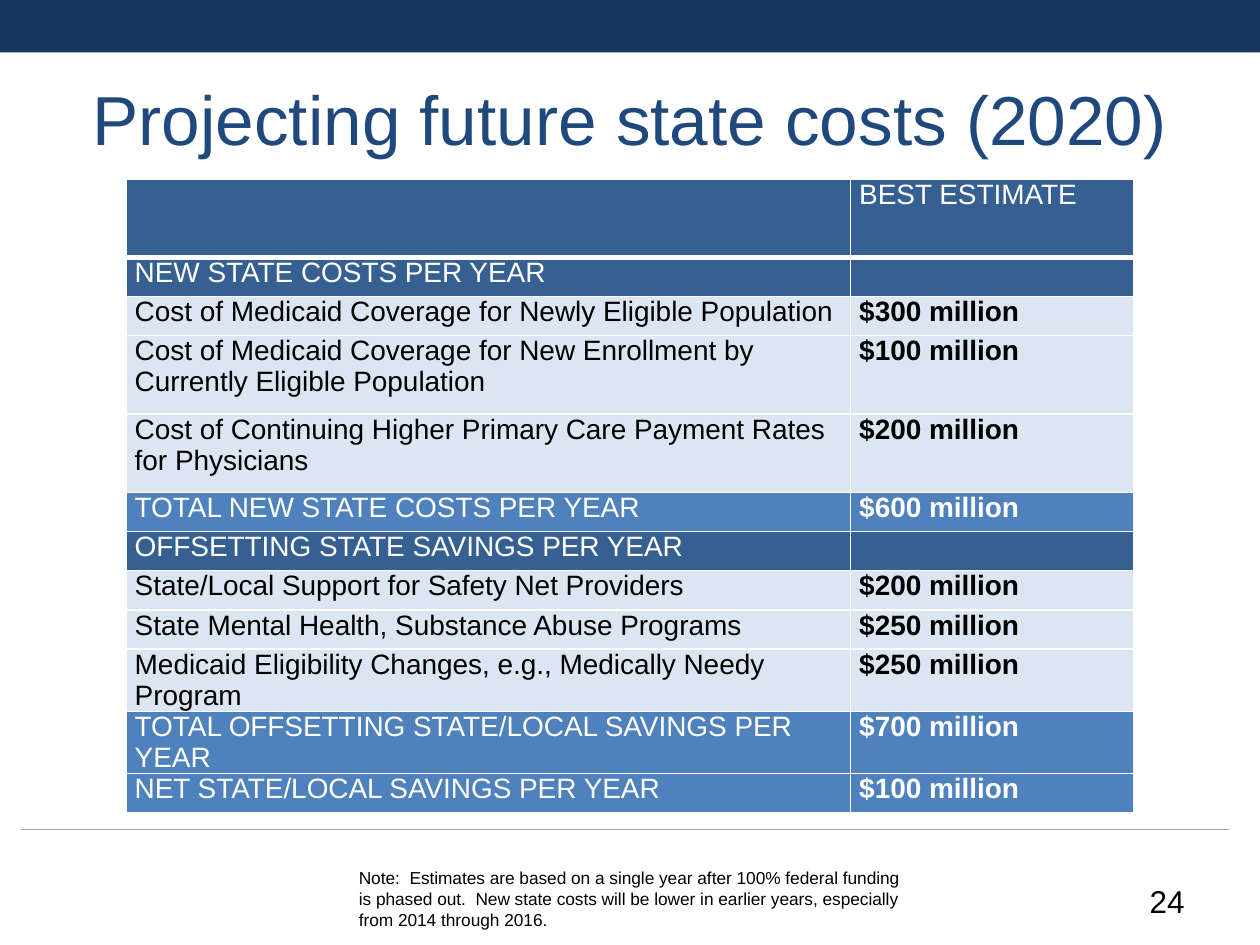
from dataclasses import dataclass
from enum import Enum

import pptx
import pptx.dml.color
import pptx.enum.shapes
import pptx.enum.text
import pptx.oxml
import pptx.oxml.ns
import pptx.util

Pt = pptx.util.Pt
Align = pptx.enum.text.PP_ALIGN
Anchor = pptx.enum.text.MSO_ANCHOR


@dataclass(frozen=True)
class Theme:
    font: str = "Arial"
    white: str = "FFFFFF"
    black: str = "000000"
    title: str = "1F497D"
    banner: str = "17375E"
    rule: str = "A6A6A6"
    section: str = "376092"
    item: str = "DCE6F2"
    total: str = "4F81BD"
    title_size: float = 39.6
    table_size: float = 16
    note_size: float = 9.9
    number_size: float = 18


THEME = Theme()


class RowKind(Enum):
    """Fill and text colour of each kind of table row."""
    SECTION = (THEME.section, THEME.white)
    ITEM = (THEME.item, THEME.black)
    TOTAL = (THEME.total, THEME.white)


@dataclass(frozen=True)
class CostRow:
    kind: RowKind
    label: str
    amount: str = ""
    units: int = 1


@dataclass(frozen=True)
class Box:
    left: float
    top: float
    width: float
    height: float

    def lengths(self) -> tuple:
        return Pt(self.left), Pt(self.top), Pt(self.width), Pt(self.height)


ROW_HEIGHT = 22.4
COLUMN_WIDTHS = (414, 162)
ROWS = (
    CostRow(RowKind.SECTION, "", "BEST ESTIMATE", 2),
    CostRow(RowKind.SECTION, "NEW STATE COSTS PER YEAR"),
    CostRow(RowKind.ITEM, "Cost of Medicaid Coverage for Newly Eligible Population", "$300 million"),
    CostRow(RowKind.ITEM, "Cost of Medicaid Coverage for New Enrollment by Currently Eligible Population",
            "$100 million", 2),
    CostRow(RowKind.ITEM, "Cost of Continuing Higher Primary Care Payment Rates for Physicians",
            "$200 million", 2),
    CostRow(RowKind.TOTAL, "TOTAL NEW STATE COSTS PER YEAR", "$600 million"),
    CostRow(RowKind.SECTION, "OFFSETTING STATE SAVINGS PER YEAR"),
    CostRow(RowKind.ITEM, "State/Local Support for Safety Net Providers", "$200 million"),
    CostRow(RowKind.ITEM, "State Mental Health, Substance Abuse Programs", "$250 million"),
    CostRow(RowKind.ITEM, "Medicaid Eligibility Changes, e.g., Medically Needy Program", "$250 million"),
    CostRow(RowKind.TOTAL, "TOTAL OFFSETTING STATE/LOCAL SAVINGS PER YEAR", "$700 million"),
    CostRow(RowKind.TOTAL, "NET STATE/LOCAL SAVINGS PER YEAR", "$100 million"),
)


def rgb(color: str) -> pptx.dml.color.RGBColor:
    return pptx.dml.color.RGBColor.from_string(color)


def write(frame, text: str, size: float, color: str, align=Align.LEFT, bold: bool = False) -> None:
    frame.word_wrap = True
    paragraph = frame.paragraphs[0]
    paragraph.text = text
    paragraph.alignment = align
    font = paragraph.font
    font.name, font.size, font.bold = THEME.font, Pt(size), bold
    font.color.rgb = rgb(color)


def add_text(slide, box: Box, text: str, size: float, align=Align.LEFT, anchor=Anchor.TOP):
    shape = slide.shapes.add_textbox(*box.lengths())
    write(shape.text_frame, text, size, THEME.black, align)
    shape.text_frame.vertical_anchor = anchor
    return shape


def add_frame(slide) -> None:
    # Banner across the top
    banner = slide.shapes.add_shape(pptx.enum.shapes.MSO_SHAPE.RECTANGLE, *Box(0, 0, 720, 30).lengths())
    banner.shadow.inherit = False
    banner.fill.solid()
    banner.fill.fore_color.rgb = rgb(THEME.banner)
    banner.line.fill.background()

    # Rule above the footer
    rule = slide.shapes.add_connector(pptx.enum.shapes.MSO_CONNECTOR.STRAIGHT,
                                      Pt(12), Pt(474), Pt(702), Pt(474))
    rule.line.color.rgb = rgb(THEME.rule)
    rule.line.width = Pt(0.75)
    properties = rule._element.spPr
    properties.append(properties.makeelement(pptx.oxml.ns.qn("a:effectLst"), {}))


def set_borders(cell, bottom_width: float) -> None:
    properties = cell._tc.get_or_add_tcPr()
    widths = {"lnL": 1, "lnR": 1, "lnT": 1, "lnB": bottom_width}
    for position, (side, width) in enumerate(widths.items()):
        properties.insert(position, pptx.oxml.parse_xml(
            f'<a:{side} {pptx.oxml.ns.nsdecls("a")} w="{Pt(width)}"><a:solidFill>'
            f'<a:srgbClr val="{THEME.white}"/></a:solidFill></a:{side}>'))


def add_cost_table(slide) -> None:
    height = ROW_HEIGHT * sum(row.units for row in ROWS)
    box = Box(72, 102.2, sum(COLUMN_WIDTHS), height)
    table = slide.shapes.add_table(len(ROWS), len(COLUMN_WIDTHS), *box.lengths()).table
    table.first_row = table.horz_banding = False
    for column, width in zip(table.columns, COLUMN_WIDTHS):
        column.width = Pt(width)
    for index, row in enumerate(ROWS):
        table.rows[index].height = Pt(ROW_HEIGHT * row.units)
        fill, color = row.kind.value
        for column_index, text in enumerate((row.label, row.amount)):
            cell = table.cell(index, column_index)
            cell.margin_left = cell.margin_right = Pt(5)
            cell.margin_top = cell.margin_bottom = Pt(0)
            cell.fill.solid()
            cell.fill.fore_color.rgb = rgb(fill)
            is_amount = column_index == 1 and row.kind is not RowKind.SECTION
            write(cell.text_frame, text, THEME.table_size, color, bold=is_amount)
            set_borders(cell, bottom_width=3 if index == 0 else 1)


def main() -> None:
    presentation = pptx.Presentation()
    presentation.slide_width, presentation.slide_height = Pt(720), Pt(540)
    slide = presentation.slides.add_slide(presentation.slide_layouts[5])
    add_frame(slide)

    # Title
    title = slide.shapes.title
    title.left, title.top, title.width, title.height = Box(36, 36, 648, 75.6).lengths()
    write(title.text_frame, "Projecting future state costs (2020)",
          THEME.title_size, THEME.title, Align.CENTER)
    title.text_frame.vertical_anchor = Anchor.TOP
    title.text_frame.margin_top = Pt(7.6)

    add_cost_table(slide)

    # Footer: note and slide number
    add_text(slide, Box(198, 492, 330, 37.5),
             "Note:  Estimates are based on a single year after 100% federal funding is phased out.  "
             "New state costs will be lower in earlier years, especially from 2014 through 2016.",
             THEME.note_size)
    add_text(slide, Box(516, 500.4, 168, 28.8), "24", THEME.number_size, Align.RIGHT, Anchor.MIDDLE)

    presentation.save("out.pptx")


if __name__ == "__main__":
    main()
